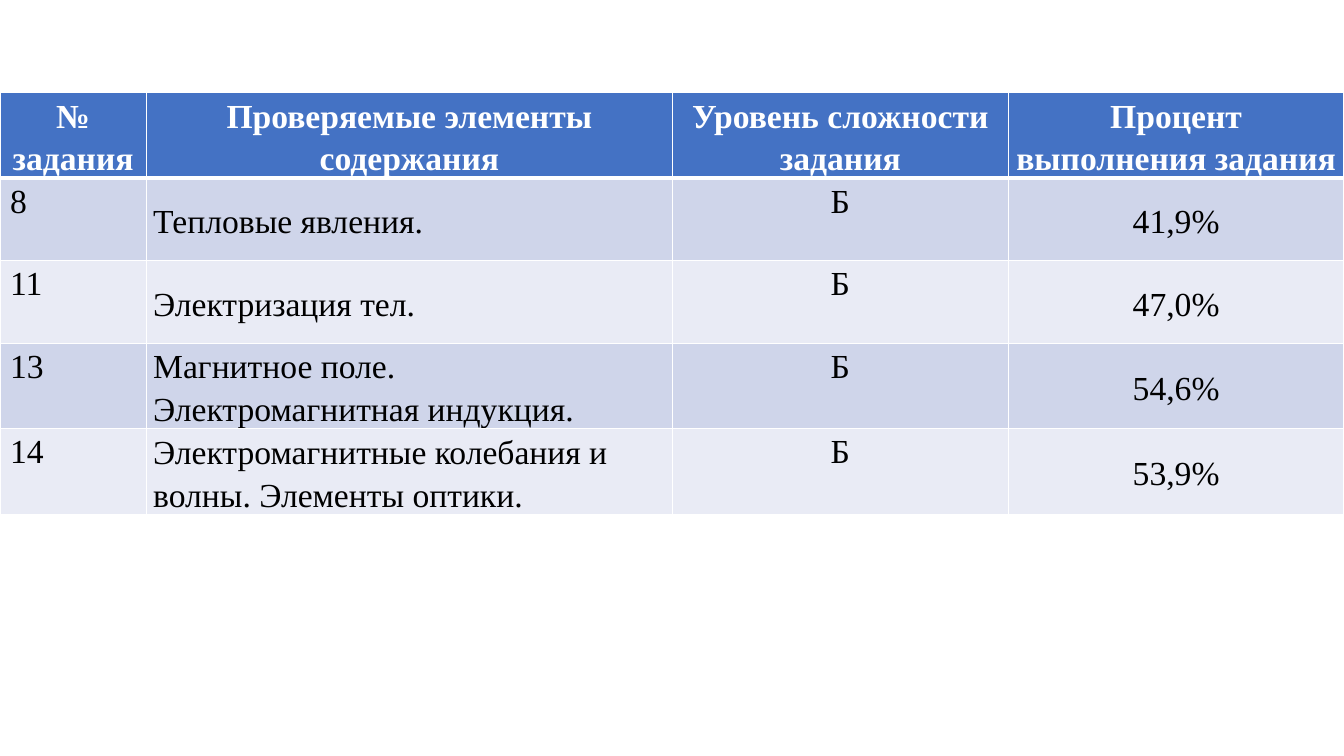
from lxml.etree import SubElement
from pptx import Presentation
from pptx.dml.color import RGBColor
from pptx.enum.text import MSO_ANCHOR as Anchor, PP_ALIGN as Align
from pptx.oxml.ns import qn
from pptx.util import Inches, Pt

COLORS = {
    "header": "4472C4",
    "odd_row": "CFD5EA",
    "even_row": "E9EBF5",
    "light": "FFFFFF",
    "dark": "000000",
}
WIDTH, HEIGHT = 13.33, 7.5
BLANK_LAYOUT = 6
COLUMN_WIDTHS = [1.45, 5.22, 3.33, 3.33]
ROW_HEIGHTS = [0.83, 0.82, 0.82, 0.83, 0.83]
COLUMN_ALIGNMENTS = [Align.LEFT, Align.LEFT, Align.CENTER, Align.CENTER]
SPACED_COLUMNS = {1, 3}  # middle-anchored columns with tight margins

HEADER = [
    "№\nзадания",
    "Проверяемые элементы\nсодержания",
    "Уровень сложности\nзадания",
    "Процент выполнения задания",
]
RESULTS = [
    ["8", "Тепловые явления.", "Б", "41,9%"],
    ["11", "Электризация тел.", "Б", "47,0%"],
    ["13", "Магнитное поле. Электромагнитная индукция.", "Б", "54,6%"],
    ["14", "Электромагнитные колебания и волны. Элементы оптики.", "Б", "53,9%"],
]


class ResultsSlide:
    font_name = "Times New Roman"
    font_size = Pt(24)

    def __init__(self, presentation):
        layout = presentation.slide_layouts[BLANK_LAYOUT]
        self.slide = presentation.slides.add_slide(layout)

    def table(self, left, top, rows):
        """Add a table whose corner is given as shares of the slide's size."""
        table = self.slide.shapes.add_table(
            len(rows), len(COLUMN_WIDTHS),
            Inches(left * WIDTH), Inches(top * HEIGHT),
            Inches(sum(COLUMN_WIDTHS)), Inches(sum(ROW_HEIGHTS)),
        ).table
        for column, width in zip(table.columns, COLUMN_WIDTHS):
            column.width = Inches(width)
        for row, height in zip(table.rows, ROW_HEIGHTS):
            row.height = Inches(height)
        for row_index, texts in enumerate(rows):
            for column_index, text in enumerate(texts):
                self.cell(table, row_index, column_index, text)

    def cell(self, table, row_index, column_index, text):
        cell = table.cell(row_index, column_index)
        is_header = row_index == 0
        spaced = is_header or column_index in SPACED_COLUMNS
        self.borders(cell, is_header, row_index == 1)
        if is_header:
            fill = "header"
        else:
            fill = "odd_row" if row_index % 2 else "even_row"
        cell.fill.solid()
        cell.fill.fore_color.rgb = RGBColor.from_string(COLORS[fill])
        if spaced:
            cell.vertical_anchor = Anchor.MIDDLE
            cell.margin_left = cell.margin_right = Inches(0.07)
            cell.margin_top = cell.margin_bottom = 0
        cell.text = text
        for paragraph in cell.text_frame.paragraphs:
            paragraph.alignment = Align.CENTER if is_header else COLUMN_ALIGNMENTS[column_index]
            if spaced:
                paragraph.line_spacing = 1.15
            font = paragraph.font
            font.name, font.size, font.bold = self.font_name, self.font_size, is_header
            font.color.rgb = RGBColor.from_string(COLORS["light" if is_header else "dark"])

    def borders(self, cell, thick_bottom, thick_top):
        properties = cell._tc.get_or_add_tcPr()
        for side in "LRTB":
            thick = (side == "B" and thick_bottom) or (side == "T" and thick_top)
            line = SubElement(properties, qn(f"a:ln{side}"), w=str(Pt(3 if thick else 1)))
            SubElement(SubElement(line, qn("a:solidFill")), qn("a:srgbClr"), val=COLORS["light"])


def main():
    presentation = Presentation()
    presentation.slide_width = Inches(WIDTH)
    presentation.slide_height = Inches(HEIGHT)
    ResultsSlide(presentation).table(0, 0.92 / HEIGHT, [HEADER, *RESULTS])
    presentation.save("out.pptx")


if __name__ == "__main__":
    main()
